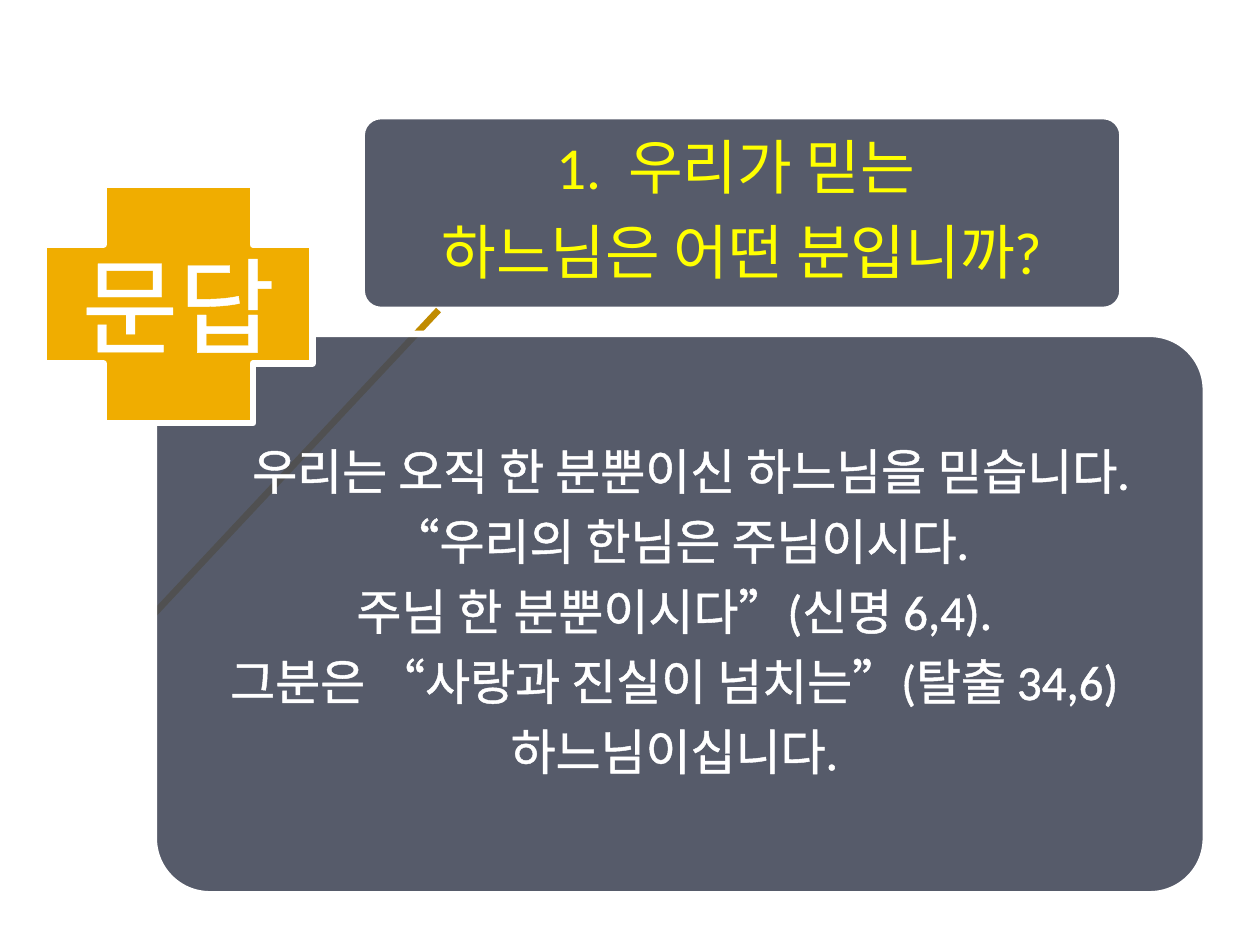
from dataclasses import dataclass

from lxml.etree import SubElement
from pptx import Presentation
from pptx.dml.color import RGBColor
from pptx.enum.shapes import MSO_CONNECTOR, MSO_SHAPE
from pptx.enum.text import MSO_ANCHOR, PP_ALIGN
from pptx.oxml import parse_xml
from pptx.oxml.ns import qn
from pptx.util import Cm, Pt

HEX = {"slate": "444A5A", "gold": "F0AD00", "ochre": "C08B00",
       "white": "FFFFFF", "yellow": "FFFF00", "black": "000000"}
FONT = "Calibri"
EDGE = Pt(3.78)
NS = 'xmlns:a="http://schemas.openxmlformats.org/drawingml/2006/main"'


@dataclass
class Line:
    text: str
    indent: float = 0


@dataclass
class Panel:
    left: float
    top: float
    width: float
    height: float
    pad: float
    inset: tuple[float, float]
    size: int
    color: str
    lines: list[Line]


TITLE = Panel(7.29, 2.34, 15.34, 3.91, 0.11, (0.18, 0.13), 34, "yellow", [
    Line("1.  우리가 믿는 "),
    Line("하느님은 어떤 분입니까?"),
])
BODY = Panel(3.1, 6.73, 21.21, 11.3, 0.33, (0.15, 0.1), 28, "white", [
    Line("우리는 오직 한 분뿐이신 하느님을 믿습니다. ", 0.67),
    Line("“우리의 한님은 주님이시다. ", 0.22),
    Line("주님 한 분뿐이시다”(신명 6,4). "),
    Line("그분은 “사랑과 진실이 넘치는”(탈출 34,6) "),
    Line("하느님이십니다. "),
])


def rgb(name: str) -> RGBColor:
    return RGBColor.from_string(HEX[name])


def add_run(para, text: str, size: int, color: str) -> None:
    """Add a run with an outline and a soft shadow."""
    para.alignment = PP_ALIGN.CENTER
    run = para.add_run()
    run.text = text
    font = run.font
    font.name, font.size = FONT, Pt(size)
    font.color.rgb = rgb(color)
    props = font.fill._xPr
    props.insert(0, parse_xml(
        f'<a:ln {NS} w="{Pt(1.45)}"><a:solidFill>'
        f'<a:srgbClr val="{HEX[color]}"/></a:solidFill></a:ln>'))
    props.find(qn("a:solidFill")).addnext(parse_xml(
        f'<a:effectLst {NS}><a:outerShdw blurRad="{Pt(5)}" dir="3600000" algn="tl">'
        f'<a:srgbClr val="{HEX["black"]}"><a:alpha val="70000"/></a:srgbClr>'
        f'</a:outerShdw></a:effectLst>'))


def add_shape(slide, kind, box: tuple, fill: str, alpha: int = 100):
    shape = slide.shapes.add_shape(kind, *map(Cm, box))
    shape.shadow.inherit = False
    shape.fill.solid()
    shape.fill.fore_color.rgb = rgb(fill)
    if alpha < 100:
        tone = shape.fill._xPr.find(qn("a:solidFill"))[0]
        SubElement(tone, qn("a:alpha"), val=str(alpha * 1000))
    shape.line.color.rgb = rgb("white")
    shape.line.width = EDGE
    return shape


def add_panel(slide, panel: Panel):
    """Draw a rounded box and the text laid inside it."""
    box = (panel.left, panel.top, panel.width, panel.height)
    shape = add_shape(slide, MSO_SHAPE.ROUNDED_RECTANGLE, box, "slate", 90)
    shape.adjustments[0] = 0.1

    pad = panel.pad
    area = (panel.left + pad, panel.top + pad,
            panel.width - 2 * pad, panel.height - 2 * pad)
    frame = slide.shapes.add_textbox(*map(Cm, area)).text_frame
    frame.word_wrap = True
    frame.vertical_anchor = MSO_ANCHOR.MIDDLE
    frame.margin_left = frame.margin_right = Cm(panel.inset[0])
    frame.margin_top = frame.margin_bottom = Cm(panel.inset[1])
    for i, line in enumerate(panel.lines):
        para = frame.add_paragraph() if i else frame.paragraphs[0]
        para.line_spacing = 0.9
        props = para._p.get_or_add_pPr()
        after = SubElement(props, qn("a:spcAft"))
        SubElement(after, qn("a:spcPct"), val="35000")
        if line.indent:
            props.set("marL", str(Cm(line.indent)))
            props.set("indent", "0")
        add_run(para, line.text, panel.size, panel.color)
    return shape


def main() -> None:
    deck = Presentation()
    deck.slide_width, deck.slide_height = Cm(25.4), Cm(19.05)
    slide = deck.slides.add_slide(deck.slide_layouts[6])

    # Question
    add_panel(slide, TITLE)

    # Link, behind the answer
    link = slide.shapes.add_connector(
        MSO_CONNECTOR.STRAIGHT, Cm(8.84), Cm(TITLE.top + TITLE.height),
        Cm(BODY.left), Cm(BODY.top + BODY.height / 2))
    link.line.color.rgb = rgb("ochre")
    link.line.width = EDGE
    SubElement(link._element.spPr, qn("a:effectLst"))

    # Answer
    link.end_connect(add_panel(slide, BODY), 1)

    # Cross badge
    cross = add_shape(slide, MSO_SHAPE.CROSS, (0.89, 3.73, 5.41, 4.8), "gold")
    frame = cross.text_frame
    frame.word_wrap = True
    frame.vertical_anchor = MSO_ANCHOR.MIDDLE
    add_run(frame.paragraphs[0], "문답", 60, "white")

    deck.save("out.pptx")


if __name__ == "__main__":
    main()
